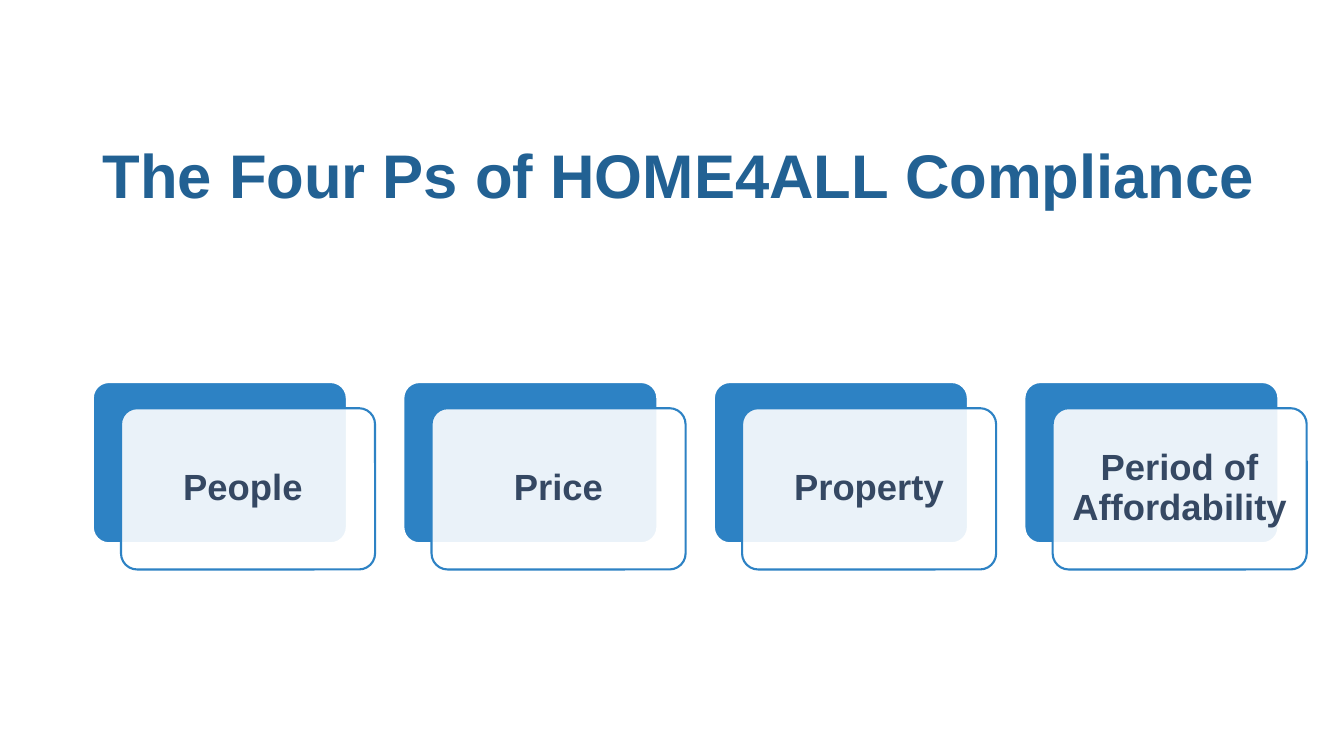
from dataclasses import dataclass

import lxml.etree
import pptx
import pptx.dml.color
import pptx.enum.shapes
import pptx.enum.text
import pptx.oxml.ns
import pptx.util

Inches = pptx.util.Inches
Pt = pptx.util.Pt
Align = pptx.enum.text.PP_ALIGN

COLORS = {"title": "226193", "blue": "2D82C4", "text": "354863", "white": "FFFFFF"}
FONT = "Arial"
CARD_WIDTH, CARD_HEIGHT = 2.52, 1.6
FIRST_LEFT, CARD_TOP, CARD_PITCH = 0.92, 3.79, 3.08
FRONT_SHIFT_X, FRONT_SHIFT_Y = 0.28, 0.26


@dataclass
class Card:
    label: str
    column: int

    @property
    def left(self) -> float:
        return FIRST_LEFT + self.column * CARD_PITCH


CARDS = [
    Card(label, column)
    for column, label in enumerate(["People ", "Price", "Property", "Period of Affordability"])
]


def color(name: str) -> pptx.dml.color.RGBColor:
    return pptx.dml.color.RGBColor.from_string(COLORS[name])


def write_text(shape, text: str, *, size: float, color_name: str,
               align=Align.LEFT, inset_x: float = 0.1, inset_y: float = 0.05) -> None:
    frame = shape.text_frame
    frame.word_wrap = True
    frame.vertical_anchor = pptx.enum.text.MSO_ANCHOR.MIDDLE
    frame.margin_left = frame.margin_right = Inches(inset_x)
    frame.margin_top = frame.margin_bottom = Inches(inset_y)
    paragraph = frame.paragraphs[0]
    paragraph.alignment = align
    paragraph.line_spacing = 0.9
    run = paragraph.add_run()
    run.text = text
    run.font.name = FONT
    run.font.size = Pt(size)
    run.font.bold = True
    run.font.color.rgb = color(color_name)


def add_panel(slide, left: float, top: float, fill: str, line: str, opacity: int = 100):
    """Add one rounded rectangle; opacity is a percentage."""
    shape = slide.shapes.add_shape(
        pptx.enum.shapes.MSO_SHAPE.ROUNDED_RECTANGLE,
        Inches(left), Inches(top), Inches(CARD_WIDTH), Inches(CARD_HEIGHT),
    )
    shape.adjustments[0] = 0.1
    shape.shadow.inherit = False
    shape.fill.solid()
    shape.fill.fore_color.rgb = color(fill)
    shape.line.color.rgb = color(line)
    shape.line.width = Pt(1.5)
    if opacity < 100:
        qn = pptx.oxml.ns.qn
        fill_color = shape.fill._xPr.find(qn("a:solidFill")).find(qn("a:srgbClr"))
        lxml.etree.SubElement(fill_color, qn("a:alpha"), val=str(opacity * 1000))
    return shape


def add_card(slide, card: Card) -> None:
    add_panel(slide, card.left, CARD_TOP, "blue", "white")
    front = add_panel(slide, card.left + FRONT_SHIFT_X, CARD_TOP + FRONT_SHIFT_Y,
                      "white", "blue", opacity=90)
    write_text(front, card.label, size=26, color_name="text", align=Align.CENTER,
               inset_x=0.11, inset_y=0.11)


def main() -> None:
    presentation = pptx.Presentation()
    presentation.slide_width = Inches(13.33)
    presentation.slide_height = Inches(7.5)
    slide = presentation.slides.add_slide(presentation.slide_layouts[6])

    title = slide.shapes.add_textbox(Inches(0.92), Inches(1.05), Inches(11.99), Inches(1.45))
    write_text(title, "The Four Ps of HOME4ALL Compliance", size=44, color_name="title")
    for card in CARDS:
        add_card(slide, card)

    presentation.save("out.pptx")


if __name__ == "__main__":
    main()
